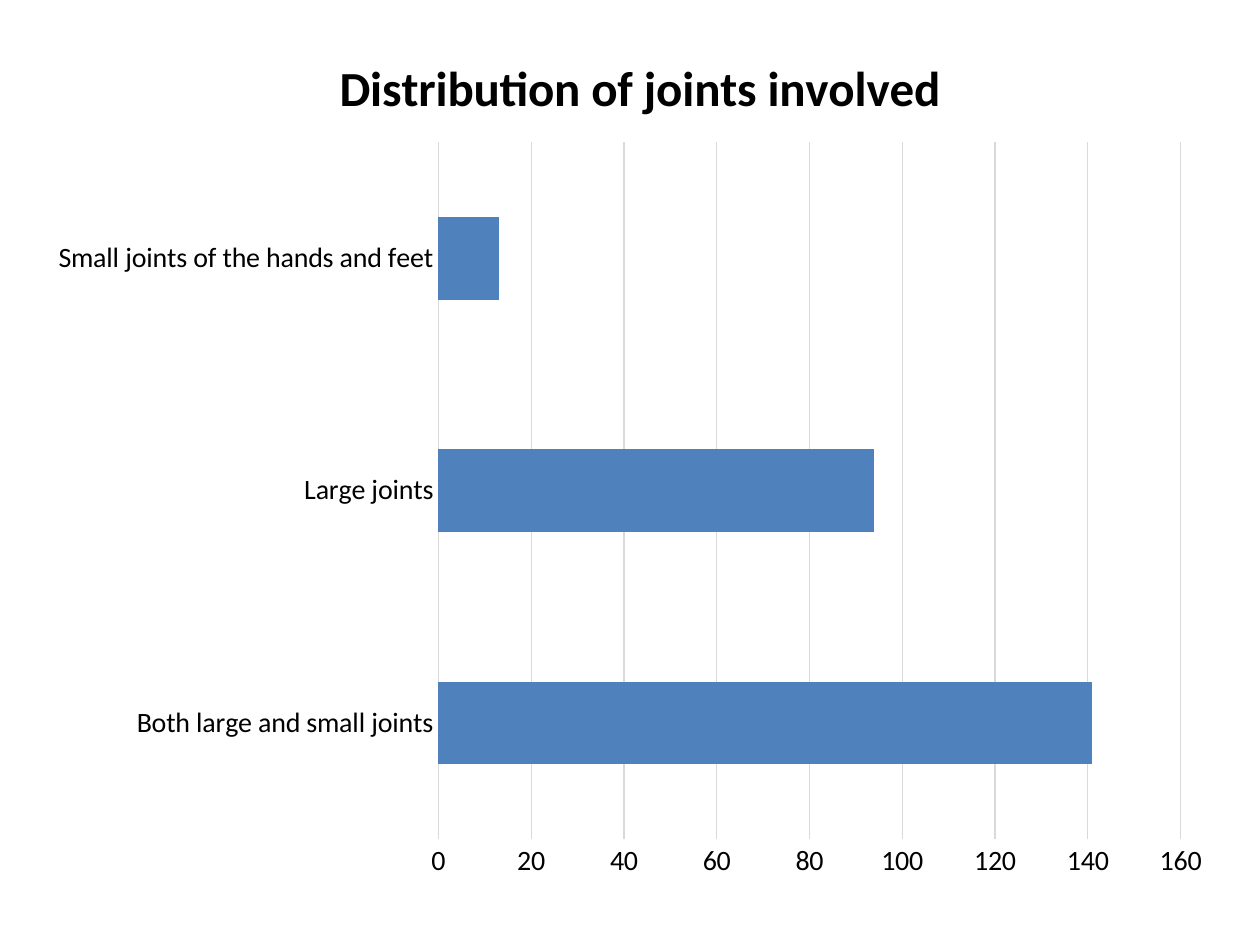
from lxml import etree
from pptx import Presentation, util as u
from pptx.chart.data import CategoryChartData
from pptx.dml.color import RGBColor
from pptx.enum import chart as ch
from pptx.oxml.ns import qn

PX = 9144


def rgb(code):
    return RGBColor.from_string(code)


def put(obj, vals):
    for key, val in vals.items():
        setattr(obj, key, val)


class Deck:
    """Holds the style and the current slide, and draws its elements."""

    face = "Calibri"
    ink, grid, fill = "000000", "D9D9D9", "4F81BD"

    def __init__(self, wide, high):
        self.prs = Presentation()
        put(self.prs, {"slide_width": wide * PX, "slide_height": high * PX})
        self.slide = self.prs.slides.add_slide(self.prs.slide_layouts[6])

    def font(self, font, size, bold=False):
        put(font, {"name": self.face, "size": u.Pt(size), "bold": bold})
        font.color.rgb = rgb(self.ink)

    def line(self, line):
        line.color.rgb = rgb(self.grid)
        line.width = u.Pt(0.75)

    def place(self, node, spot, vals):
        for old in node.findall(qn("c:layout")):
            node.remove(old)
        frame = etree.Element(qn("c:layout"))
        node.insert(spot, frame)
        box = etree.SubElement(frame, qn("c:manualLayout"))
        for key, val in vals.items():
            etree.SubElement(box, qn("c:" + key)).set("val", str(val))

    def title(self, chart, label):
        chart.has_title = True
        title = chart.chart_title
        title.include_in_layout = False
        para = title.text_frame.paragraphs[0]
        run = para.add_run()
        run.text = label
        self.font(run.font, 28, True)
        self.place(title._element, 1, {
            "xMode": "edge", "yMode": "edge", "x": 0.25, "y": 0.04})

    def axis(self, axis):
        put(axis, {"major_tick_mark": ch.XL_TICK_MARK.NONE,
                   "minor_tick_mark": ch.XL_TICK_MARK.NONE})
        self.font(axis.tick_labels.font, 16)

    def bars(self, box, label, name, rows):
        data = CategoryChartData()
        data.categories = list(rows)
        data.add_series(name, rows.values())
        chart = self.slide.shapes.add_chart(
            ch.XL_CHART_TYPE.BAR_CLUSTERED, *(n * PX for n in box), data).chart
        chart.has_legend = False
        self.font(chart.font, 12)
        self.title(chart, label)
        cat, val = chart.category_axis, chart.value_axis
        for axis in (cat, val):
            self.axis(axis)
        cat.has_major_gridlines = False
        self.line(cat.format.line)
        put(val, {"minimum_scale": 0, "maximum_scale": 160, "major_unit": 20,
                  "has_major_gridlines": True})
        val.format.line.fill.background()
        self.line(val.major_gridlines.format.line)
        plot = chart.plots[0]
        put(plot, {"gap_width": 182, "vary_by_categories": False})
        paint = plot.series[0].format.fill
        paint.solid()
        paint.fore_color.rgb = rgb(self.fill)
        self.place(chart._chartSpace.chart.plotArea, 0, {
            "layoutTarget": "inner", "xMode": "edge", "yMode": "edge",
            "x": 0.34, "y": 0.15, "w": 0.62, "h": 0.79})


def main():
    deck = Deck(1000, 750)
    deck.bars((25, 8, 950, 700), "Distribution of joints involved", "Series 1", {
        "Both large and small joints": 141,
        "Large joints": 94,
        "Small joints of the hands and feet": 13,
    })
    deck.prs.save("out.pptx")


if __name__ == "__main__":
    main()
